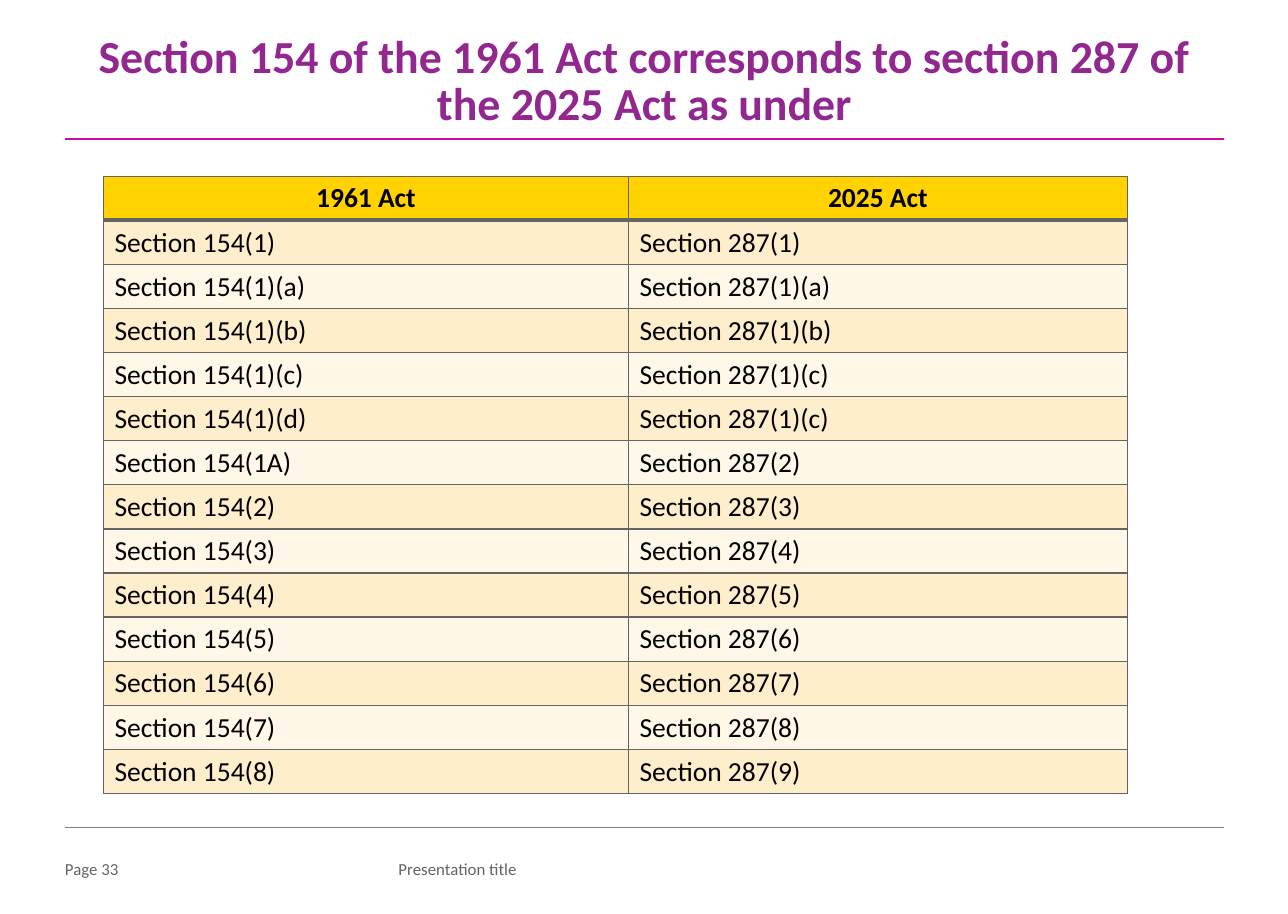
from dataclasses import dataclass

from lxml import etree
from pptx import Presentation
from pptx.dml.color import RGBColor
from pptx.enum.shapes import MSO_CONNECTOR
from pptx.enum.text import MSO_ANCHOR, PP_ALIGN
from pptx.oxml.ns import qn
from pptx.util import Inches, Pt

STRAIGHT = MSO_CONNECTOR.STRAIGHT
TOP = MSO_ANCHOR.TOP
LEFT, CENTER = PP_ALIGN.LEFT, PP_ALIGN.CENTER


@dataclass(frozen=True)
class Theme:
    font: str = "Calibri"
    title: str = "91278F"
    title_rule: str = "CA0CA1"
    footer_rule: str = "808080"
    muted: str = "646464"
    ink: str = "000000"
    header_fill: str = "FFD200"
    bands: tuple = ("FFEECC", "FFF7E7")
    title_size: int = 30
    table_size: int = 18
    footer_size: int = 11
    thin: int = 1
    thick: int = 3


THEME = Theme()
TITLE = "Section 154 of the 1961 Act corresponds to section 287 of the 2025 Act as under"
HEADINGS = ("1961 Act", "2025 Act")
SECTIONS = (
    ("(1)", "(1)"),
    ("(1)(a)", "(1)(a)"),
    ("(1)(b)", "(1)(b)"),
    ("(1)(c)", "(1)(c)"),
    ("(1)(d)", "(1)(c)"),
    ("(1A)", "(2)"),
    ("(2)", "(3)"),
    ("(3)", "(4)"),
    ("(4)", "(5)"),
    ("(5)", "(6)"),
    ("(6)", "(7)"),
    ("(7)", "(8)"),
    ("(8)", "(9)"),
)
ROWS = [HEADINGS] + [
    (f"Section 154{old}", f"Section 287{new}") for old, new in SECTIONS
]


def write(frame, text, size, color, bold=False, align=LEFT):
    frame.text = text
    para = frame.paragraphs[0]
    para.alignment = align
    for span in para.runs:
        span.font.name = THEME.font
        span.font.size = Pt(size)
        span.font.bold = bold
        span.font.color.rgb = RGBColor.from_string(color)
    return para


def add_label(page, box, text, size, color, bold=False, align=LEFT):
    """Add a text box without margins and return its paragraph."""
    frame = page.shapes.add_textbox(*map(Inches, box)).text_frame
    frame.word_wrap = True
    frame.vertical_anchor = TOP
    frame.margin_left = frame.margin_right = 0
    frame.margin_top = frame.margin_bottom = 0
    return write(frame, text, size, color, bold, align)


def add_rule(page, left, top, width, color, weight):
    rule = page.shapes.add_connector(
        STRAIGHT, Inches(left), Inches(top), Inches(left + width), Inches(top)
    )
    rule.line.color.rgb = RGBColor.from_string(color)
    rule.line.width = Pt(weight)
    etree.SubElement(rule._element.spPr, qn("a:effectLst"))


def set_borders(cell, top, bottom):
    """Draw all four borders; they must precede the fill in the cell's XML."""
    properties = cell._tc.get_or_add_tcPr()
    weights = {"L": THEME.thin, "R": THEME.thin, "T": top, "B": bottom}
    for index, (side, weight) in enumerate(weights.items()):
        border = etree.Element(qn(f"a:ln{side}"), w=str(Pt(weight)))
        fill = etree.SubElement(border, qn("a:solidFill"))
        etree.SubElement(fill, qn("a:srgbClr"), val=THEME.muted)
        properties.insert(index, border)


def add_title(page, box):
    left, top, width, height = box
    para = add_label(
        page, box, TITLE, THEME.title_size, THEME.title, bold=True, align=CENTER
    )
    para.line_spacing = 0.85
    add_rule(page, left, top + height + 0.09, width, THEME.title_rule, 1.5)


def add_section_table(page, box):
    left, top, width, height = box
    table = page.shapes.add_table(
        len(ROWS), len(HEADINGS), *map(Inches, box)
    ).table
    first_width = 4.77
    for column, column_width in zip(table.columns, (first_width, width - first_width)):
        column.width = Inches(column_width)
    for row in table.rows:
        row.height = Inches(height / len(ROWS))

    for row_index, texts in enumerate(ROWS):
        header = row_index == 0
        fill = THEME.header_fill if header else THEME.bands[(row_index - 1) % 2]
        above = THEME.thick if row_index == 1 else THEME.thin
        below = THEME.thick if header else THEME.thin
        for column_index, text in enumerate(texts):
            cell = table.cell(row_index, column_index)
            cell.fill.solid()
            cell.fill.fore_color.rgb = RGBColor.from_string(fill)
            set_borders(cell, above, below)
            write(
                cell.text_frame, text, THEME.table_size, THEME.ink,
                bold=header, align=CENTER if header else LEFT,
            )


def add_footer(page, box):
    left, top, width, height = box
    add_rule(page, left, top, width, THEME.footer_rule, 0.25)
    label_height = 0.22
    label_top = top + height - label_height
    for text, offset, label_width in (
        ("Page 33", 0, 0.79),
        ("Presentation title", 3.03, 3.76),
    ):
        label_box = (left + offset, label_top, label_width, label_height)
        add_label(page, label_box, text, THEME.footer_size, THEME.muted)


def main():
    deck = Presentation()
    deck.slide_width, deck.slide_height = Inches(11.7), Inches(8.3)
    page = deck.slides.add_slide(deck.slide_layouts[6])
    add_title(page, (0.59, 0.33, 10.53, 0.84))
    add_section_table(page, (0.94, 1.6, 9.3, 5.6))
    add_footer(page, (0.59, 7.51, 10.53, 0.51))
    deck.save("out.pptx")


if __name__ == "__main__":
    main()
